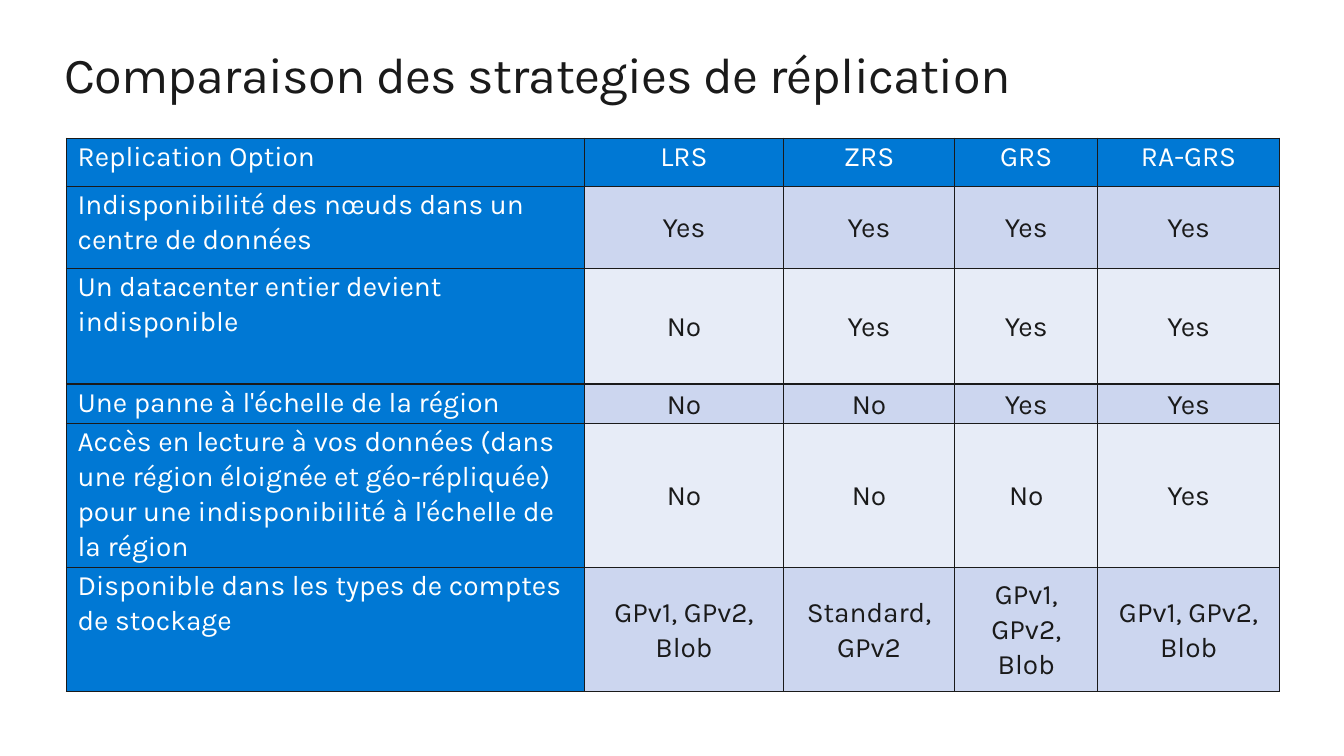
from lxml import etree
from pptx import Presentation
from pptx.dml.color import RGBColor
from pptx.enum.text import MSO_ANCHOR, PP_ALIGN
from pptx.oxml.ns import qn
from pptx.util import Inches, Pt

TOP, MIDDLE = MSO_ANCHOR.TOP, MSO_ANCHOR.MIDDLE
LEFT, CENTER = PP_ALIGN.LEFT, PP_ALIGN.CENTER

FONT = "Karla"
COLORS = {"ink": "1A1A1A", "white": "FFFFFF", "header": "0078D4",
          "band_dark": "CCD6EF", "band_light": "E7ECF7"}
COLS = [5.14, 1.97, 1.7, 1.42, 1.8]
ROWS = [0.48, 0.81, 1.15, 0.39, 1.43, 1.23]
DATA = [
    ["Replication Option", "LRS", "ZRS", "GRS", "RA-GRS"],
    ["Indisponibilité des nœuds dans un centre de données",
     "Yes", "Yes", "Yes", "Yes"],
    ["Un datacenter entier devient indisponible", "No", "Yes", "Yes", "Yes"],
    ["Une panne à l'échelle de la région", "No", "No", "Yes", "Yes"],
    ["Accès en lecture à vos données (dans une région éloignée et "
     "géo-répliquée) pour une indisponibilité à l'échelle de la région",
     "No", "No", "No", "Yes"],
    ["Disponible dans les types de comptes de stockage",
     "GPv1, GPv2, Blob", "Standard,\nGPv2", "GPv1, GPv2, Blob",
     "GPv1, GPv2, Blob"],
]


def add_run(p, text, size, color):
    r = p.add_run()
    r.text = text
    r.font.size = Pt(size)
    r.font.name = FONT
    r.font.color.rgb = RGBColor.from_string(COLORS[color])
    return r


def add_borders(cell, color):
    tcPr = cell._tc.get_or_add_tcPr()
    for i, side in enumerate(("lnL", "lnR", "lnT", "lnB")):
        ln = etree.Element(qn(f"a:{side}"), w=str(Pt(1)))
        fill = etree.SubElement(ln, qn("a:solidFill"))
        etree.SubElement(fill, qn("a:srgbClr"), val=COLORS[color])
        tcPr.insert(i, ln)


prs = Presentation()
prs.slide_width, prs.slide_height = Inches(13.33), Inches(7.5)
s = prs.slides.add_slide(prs.slide_layouts[6])

# Title
sp = s.shapes.add_textbox(Inches(0.64), Inches(0.5), Inches(12.05), Inches(0.61))
tf = sp.text_frame
tf.word_wrap = True
tf.margin_left = tf.margin_right = tf.margin_top = tf.margin_bottom = 0
p = tf.paragraphs[0]
p.line_spacing = 0.9
r = add_run(p, "Comparaison des strategies de réplication", 36, "ink")
r.font._element.set("spc", "-50")

# Table grid
table = s.shapes.add_table(len(ROWS), len(COLS), Inches(0.66), Inches(1.37),
                           Inches(sum(COLS)), Inches(sum(ROWS))).table
for column, width in zip(table.columns, COLS):
    column.width = Inches(width)
for row, height in zip(table.rows, ROWS):
    row.height = Inches(height)

# Cells: blue first row and column, banded body
for i, values in enumerate(DATA):
    for j, value in enumerate(values):
        cell = table.cell(i, j)
        body = i > 0 and j > 0
        band = "band_dark" if i % 2 else "band_light"
        cell.fill.solid()
        cell.fill.fore_color.rgb = RGBColor.from_string(
            COLORS[band if body else "header"])
        add_borders(cell, "ink")
        cell.margin_left = cell.margin_right = Inches(0.11)
        cell.margin_top = cell.margin_bottom = 0
        cell.vertical_anchor = MIDDLE if body else TOP
        tf = cell.text_frame
        for k, line in enumerate(value.split("\n")):
            p = tf.add_paragraph() if k else tf.paragraphs[0]
            p.alignment = CENTER if j else LEFT
            p.line_spacing = 1.07
            r = add_run(p, line, 20, "ink" if body else "white")
            r.font.bold = False

prs.save("out.pptx")
